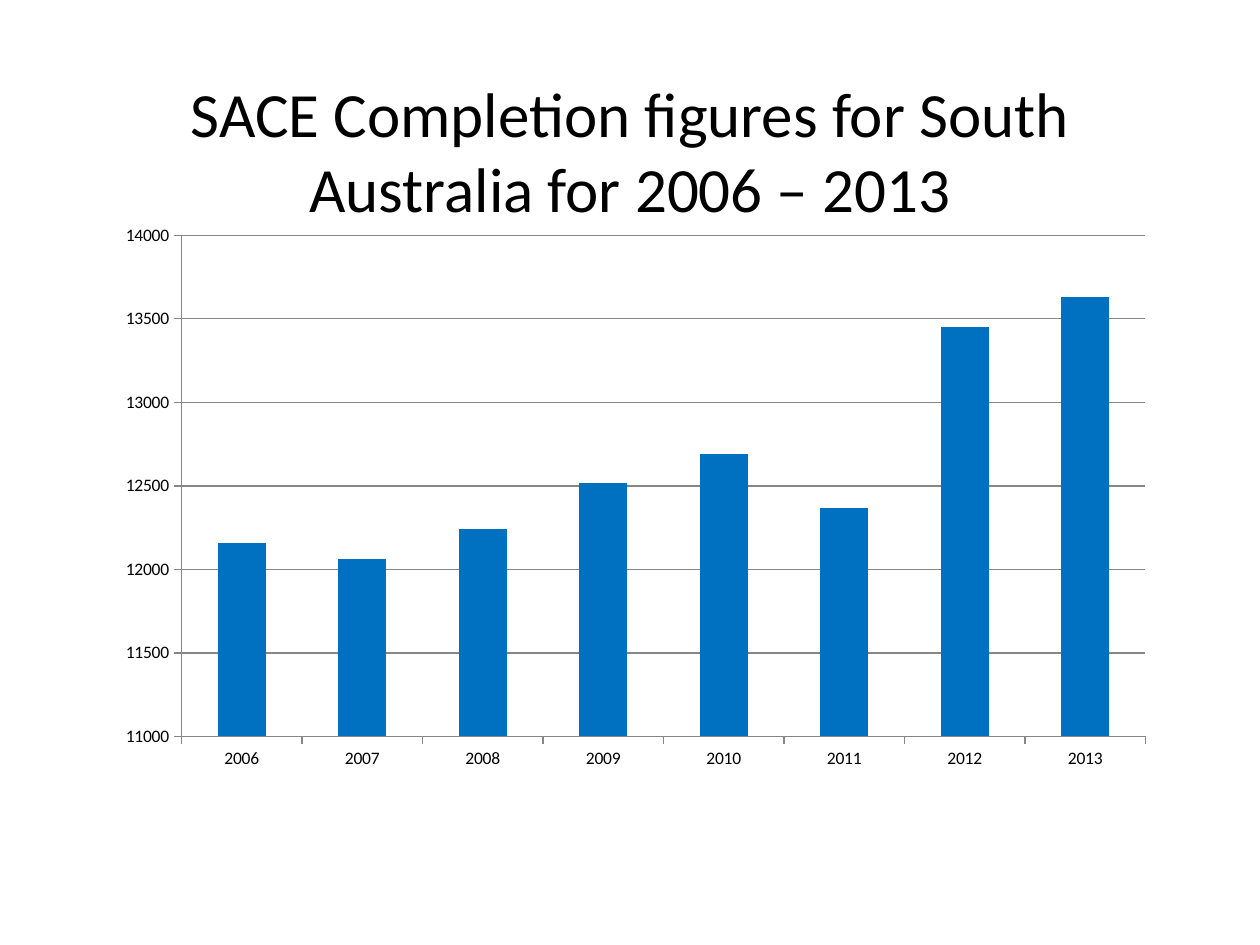
from pptx import Presentation
from pptx.chart.data import CategoryChartData
from pptx.dml.color import RGBColor
from pptx.enum.chart import XL_CHART_TYPE, XL_TICK_MARK
from pptx.enum.text import MSO_ANCHOR, MSO_AUTO_SIZE, PP_ALIGN
from pptx.util import Inches, Pt

COLUMN = XL_CHART_TYPE.COLUMN_CLUSTERED
OUT, NONE = XL_TICK_MARK.OUTSIDE, XL_TICK_MARK.NONE
MIDDLE, CENTER = MSO_ANCHOR.MIDDLE, PP_ALIGN.CENTER

TITLE = "SACE Completion figures for South Australia for 2006 – 2013"
FIGURES = {
    "2006": 12160, "2007": 12060, "2008": 12240, "2009": 12520,
    "2010": 12690, "2011": 12370, "2012": 13450, "2013": 13630,
}
BLACK, BLUE, GREY = "000000", "0070C0", "868686"


def color(target, value):
    target.rgb = RGBColor.from_string(value)


def style(font, size):
    font.name, font.size, font.bold = "Calibri", Pt(size), False
    color(font.color, BLACK)


def rule(line):
    line.width = Pt(0.75)
    color(line.color, GREY)


def add_title(slide):
    title = slide.shapes.title
    title.left, title.top = Inches(0.67), Inches(0.52)
    title.width, title.height = Inches(8.66), Inches(1.34)
    frame = title.text_frame
    frame.text = TITLE
    frame.word_wrap = True
    frame.auto_size = MSO_AUTO_SIZE.NONE
    frame.vertical_anchor = MIDDLE
    para = frame.paragraphs[0]
    para.alignment = CENTER
    style(para.font, 36)


def add_chart(slide):
    data = CategoryChartData()
    data.categories = list(FIGURES)
    data.add_series("Series 1", list(FIGURES.values()))
    chart = slide.shapes.add_chart(
        COLUMN, Inches(0.83), Inches(1.7), Inches(8.43), Inches(4.49), data
    ).chart
    chart.has_title = chart.has_legend = False
    style(chart.font, 10)

    plot = chart.plots[0]
    plot.gap_width = 150
    plot.vary_by_categories = False
    fill = plot.series[0].format.fill
    fill.solid()
    color(fill.fore_color, BLUE)

    years, counts = chart.category_axis, chart.value_axis
    for axis in (years, counts):
        axis.major_tick_mark, axis.minor_tick_mark = OUT, NONE
        rule(axis.format.line)
    counts.minimum_scale, counts.maximum_scale = 11000, 14000
    counts.major_unit = 500
    counts.has_major_gridlines = True
    rule(counts.major_gridlines.format.line)


def main():
    deck = Presentation()
    deck.slide_width, deck.slide_height = Inches(10), Inches(7.5)
    slide = deck.slides.add_slide(deck.slide_layouts[5])
    add_title(slide)
    add_chart(slide)
    deck.save("out.pptx")


if __name__ == "__main__":
    main()
